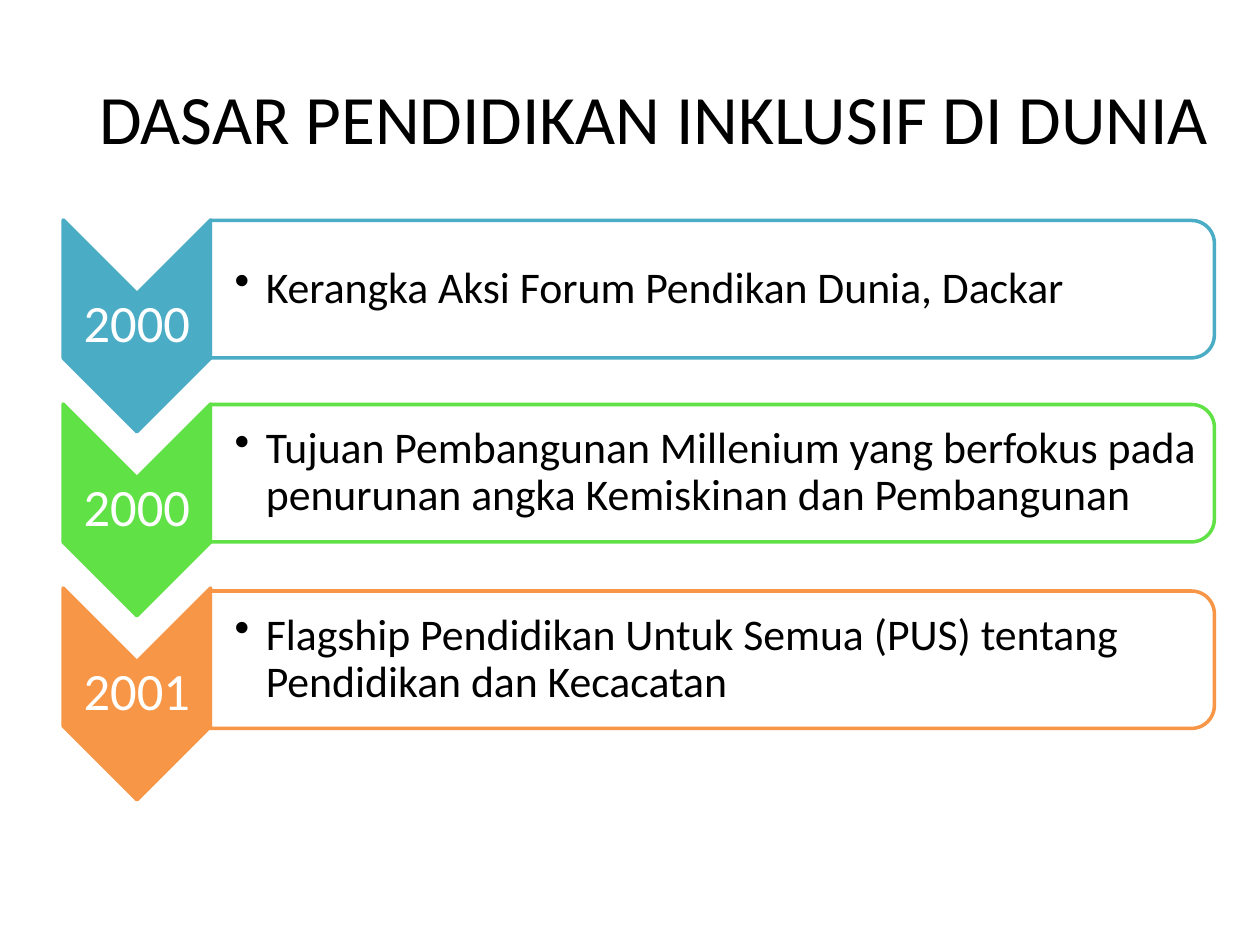
from dataclasses import dataclass

from lxml.etree import SubElement
from pptx import Presentation
from pptx.dml.color import RGBColor
from pptx.enum.shapes import MSO_SHAPE as Shape
from pptx.enum.text import MSO_ANCHOR as Anchor, PP_ALIGN as Align
from pptx.oxml.ns import qn
from pptx.util import Cm, Pt

FONT = "Calibri"
BLACK, WHITE = "000000", "FFFFFF"
FIRST_ARROW_Y, ROW_PITCH = 6.57, 3.71  # centre of first chevron, step in cm
ARROW_X, PANEL_X, BODY_X = 2.76, 14.36, 14.3  # column centres in cm


@dataclass
class Milestone:
    year: str
    text: str
    color: str
    panel_y: float  # centre of the panel in cm


MILESTONES = [
    Milestone("2000", "Kerangka Aksi Forum Pendikan Dunia, Dackar", "4BACC6", 5.83),
    Milestone("2000", "Tujuan Pembangunan Millenium yang berfokus pada "
              "penurunan angka Kemiskinan dan Pembangunan", "60E146", 9.54),
    Milestone("2001", "Flagship Pendidikan Untuk Semua (PUS) tentang "
              "Pendidikan dan Kecacatan", "F79646", 13.3),
]


def rgb(value: str) -> RGBColor:
    return RGBColor.from_string(value)


def centred(x: float, y: float, w: float, h: float) -> tuple:
    """Left, top, width and height of a box centred on x, y (cm)."""
    return Cm(x - w / 2), Cm(y - h / 2), Cm(w), Cm(h)


def write(sp, text: str, *, size: float, color: str = BLACK, align=None,
          spacing: float | None = None, bullet: bool = False) -> None:
    tf = sp.text_frame
    tf.word_wrap = True
    tf.vertical_anchor = Anchor.MIDDLE
    p = tf.paragraphs[0]
    p.alignment = align
    if spacing:
        p.line_spacing = spacing
    if bullet:
        p.level = 1
        pPr = p._p.get_or_add_pPr()
        pPr.set("marL", str(Cm(0.63)))
        pPr.set("indent", str(-Cm(0.63)))
        SubElement(pPr, qn("a:buChar")).set("char", "•")
    r = p.add_run()
    r.text = text
    r.font.name = FONT
    r.font.size = Pt(size)
    r.font.color.rgb = rgb(color)


def add_turned_shape(slide, kind, box: tuple, fill: str, line: str,
                     opacity: int = 100) -> None:
    sp = slide.shapes.add_shape(kind, *box)
    sp.rotation = 90
    sp.shadow.inherit = False
    sp.fill.solid()
    sp.fill.fore_color.rgb = rgb(fill)
    sp.line.color.rgb = rgb(line)
    sp.line.width = Pt(2)
    if opacity < 100:
        clr = sp._element.spPr.find(qn("a:solidFill")).find(qn("a:srgbClr"))
        SubElement(clr, qn("a:alpha")).set("val", str(opacity * 1000))


def add_label(slide, box: tuple, text: str, *, left_inset: float = 0.05, **style) -> None:
    sp = slide.shapes.add_textbox(*box)
    tf = sp.text_frame
    tf.margin_left = Cm(left_inset)
    tf.margin_top = tf.margin_right = tf.margin_bottom = Cm(0.05)
    write(sp, text, spacing=0.9, **style)


def add_milestone(slide, item: Milestone, arrow_y: float) -> None:
    # Chevron with its year
    add_turned_shape(slide, Shape.CHEVRON, centred(ARROW_X, arrow_y, 4.27, 2.97),
                     item.color, item.color)
    add_label(slide, centred(ARROW_X, arrow_y, 2.97, 1.27), item.year,
              size=30, color=WHITE, align=Align.CENTER)
    # Panel with its description
    add_turned_shape(slide, Shape.ROUND_2_SAME_RECTANGLE,
                     centred(PANEL_X, item.panel_y, 2.77, 20.24),
                     WHITE, item.color, opacity=90)
    add_label(slide, centred(BODY_X, item.panel_y, 20.12, 2.49), item.text,
              left_inset=0.49, size=25, bullet=True)


def main() -> None:
    prs = Presentation()
    prs.slide_width, prs.slide_height = Cm(25.4), Cm(19.05)
    slide = prs.slides.add_slide(prs.slide_layouts[5])

    # Title
    title = slide.shapes.title
    title.left, title.top, title.width, title.height = Cm(1.27), Cm(0.76), Cm(23.83), Cm(3.18)
    write(title, "DASAR PENDIDIKAN INKLUSIF DI DUNIA", size=39.6, align=Align.CENTER)

    # Timeline rows
    for i, item in enumerate(MILESTONES):
        add_milestone(slide, item, FIRST_ARROW_Y + i * ROW_PITCH)

    prs.save("out.pptx")


if __name__ == "__main__":
    main()
